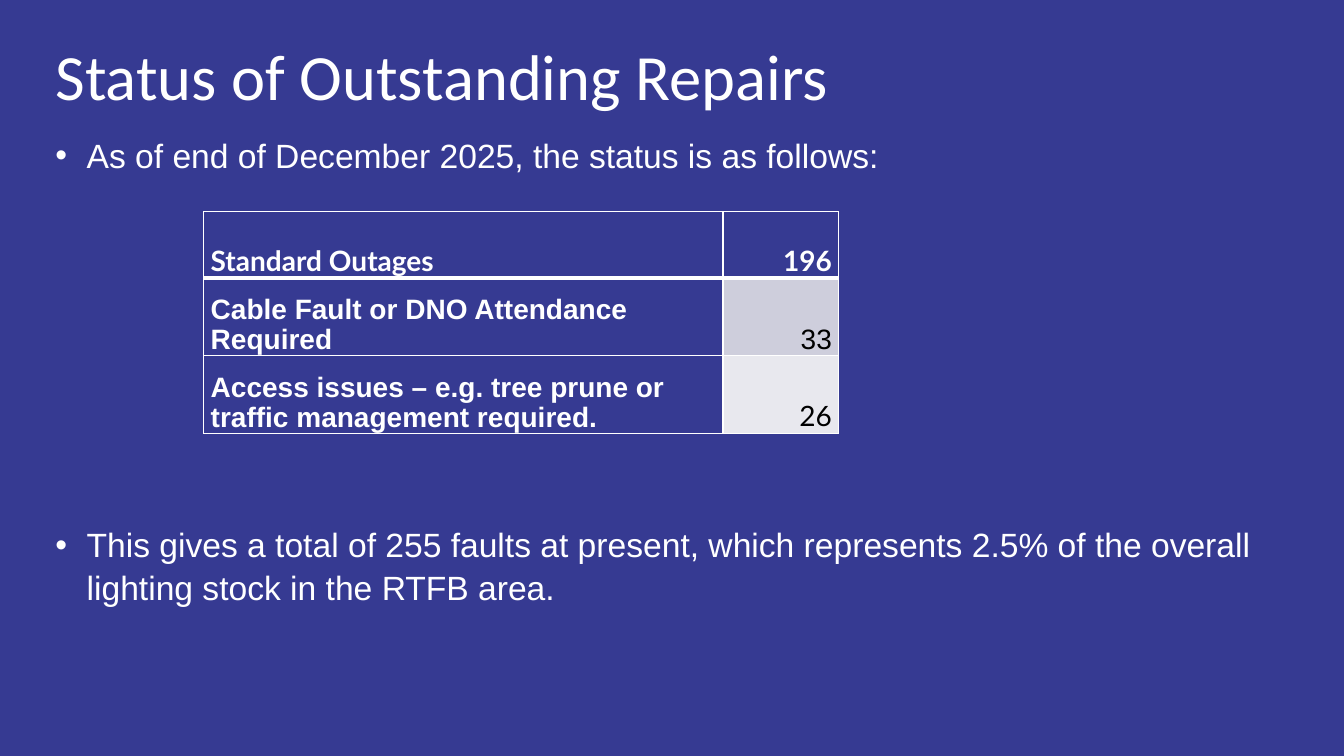
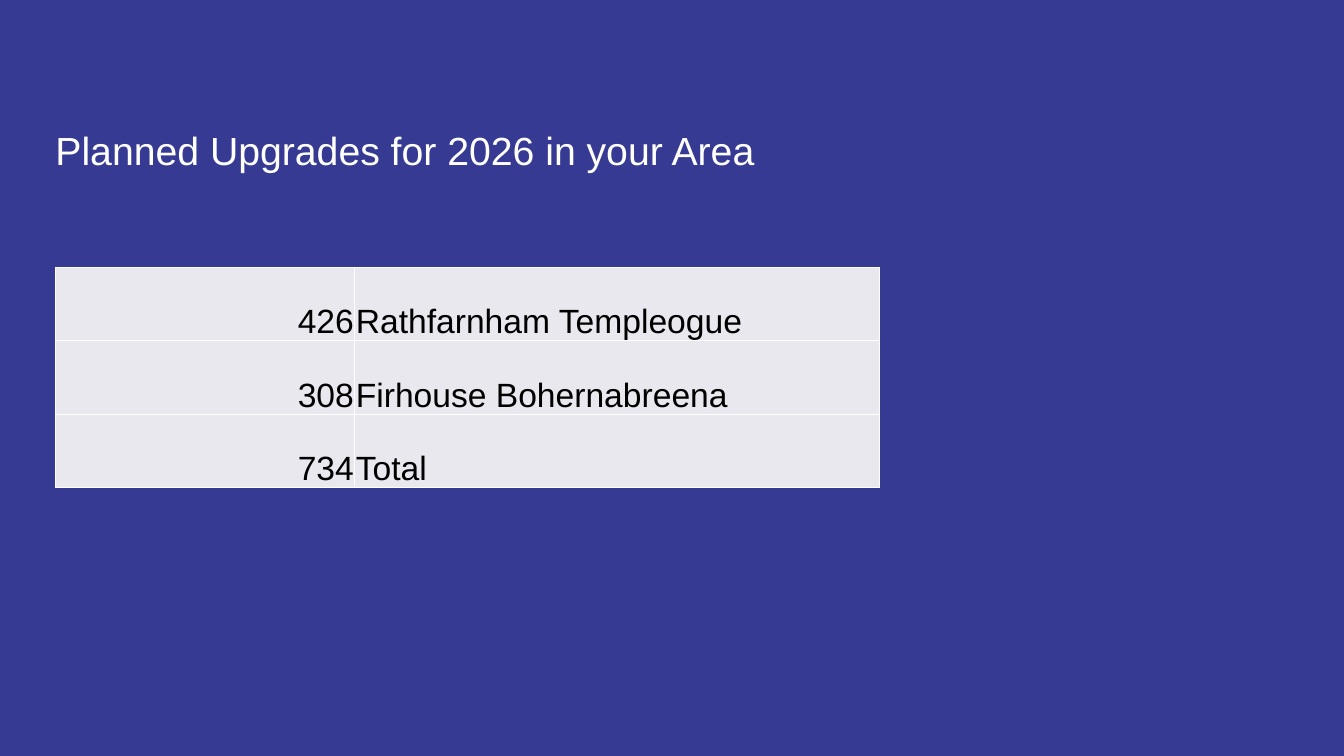
from lxml.etree import SubElement
from pptx import Presentation
from pptx.dml.color import RGBColor
from pptx.enum.text import MSO_ANCHOR as Anchor, MSO_AUTO_SIZE as AutoSize, PP_ALIGN as Align
from pptx.oxml.ns import qn
from pptx.util import Inches, Pt

NAVY = RGBColor(0x36, 0x3A, 0x92)
WHITE = RGBColor(0xFF, 0xFF, 0xFF)
BLACK = RGBColor(0, 0, 0)
BAND_DARK = RGBColor(0xCE, 0xCE, 0xDC)
BAND_LIGHT = RGBColor(0xE8, 0xE8, 0xEE)

LEFT = 0.55
TITLE_ONLY, TITLE_AND_BODY = 5, 1
THIN, THICK = 1, 3


class Deck:
    """Holds the shared style and the current slide."""

    def __init__(self):
        self.presentation = Presentation()
        self.presentation.slide_width = Inches(13.33)
        self.presentation.slide_height = Inches(7.5)
        fill = self.presentation.slide_master.background.fill
        fill.solid()
        fill.fore_color.rgb = NAVY
        self.slide = None

    def add_slide(self, layout):
        layouts = self.presentation.slide_layouts
        self.slide = self.presentation.slides.add_slide(layouts[layout])

    def add_text(self, paragraph, text, size, font, color=WHITE, bold=False):
        run = paragraph.add_run()
        run.text = text
        run.font.size = Pt(size)
        run.font.name = font
        run.font.color.rgb = color
        run.font.bold = bold

    def place(self, shape, top, width, height):
        """Position a placeholder and return its text frame."""
        shape.left, shape.top = Inches(LEFT), Inches(top)
        shape.width, shape.height = Inches(width), Inches(height)
        frame = shape.text_frame
        frame.margin_left = frame.margin_right = 0
        frame.margin_top = frame.margin_bottom = 0
        frame.word_wrap = True
        frame.auto_size = AutoSize.NONE
        frame.vertical_anchor = Anchor.TOP
        return frame

    def add_title(self, text, top, width, height, size, font):
        frame = self.place(self.slide.shapes.title, top, width, height)
        paragraph = frame.paragraphs[0]
        paragraph.alignment = Align.LEFT
        self.add_text(paragraph, text, size, font)

    def add_bullets(self, texts, top, width, height, gap):
        frame = self.place(self.slide.placeholders[1], top, width, height)
        for index, text in enumerate(texts):
            paragraph = frame.add_paragraph() if index else frame.paragraphs[0]
            properties = paragraph._p.get_or_add_pPr()
            properties.set("marL", str(Inches(0.31)))
            properties.set("indent", str(Inches(-0.31)))
            SubElement(properties, qn("a:buFont"), typeface="Arial")
            SubElement(properties, qn("a:buChar"), char="•")
            paragraph.line_spacing = 1.06
            paragraph.space_before = Pt(gap if index else 0)
            self.add_text(paragraph, text, 24, "Arial")

    def add_border(self, cell, side, width):
        line = SubElement(cell._tc.get_or_add_tcPr(), qn(f"a:ln{side}"), w=str(Pt(width)))
        solid = SubElement(line, qn("a:solidFill"))
        SubElement(solid, qn("a:srgbClr"), val=str(WHITE))

    def add_table(self, left, top, widths, heights, rows, margins, size, spacing=1.0, header=False):
        """Each cell is (text, alignment, font, text colour, bold, fill)."""
        frame = self.slide.shapes.add_table(
            len(rows), len(widths), Inches(left), Inches(top),
            Inches(sum(widths)), Inches(sum(heights)))
        table = frame.table
        table.first_row = header
        table.horz_banding = False
        for column, width in zip(table.columns, widths):
            column.width = Inches(width)
        for row, height in zip(table.rows, heights):
            row.height = Inches(height)
        side_margin, top_margin = margins
        for row_index, row in enumerate(rows):
            above = THICK if header and row_index == 1 else THIN
            below = THICK if header and row_index == 0 else THIN
            for column_index, (text, align, font, color, bold, fill) in enumerate(row):
                cell = table.cell(row_index, column_index)
                cell.margin_left = cell.margin_right = Inches(side_margin)
                cell.margin_top, cell.margin_bottom = Inches(top_margin), 0
                cell.vertical_anchor = Anchor.BOTTOM
                for side, width in zip("LRTB", (THIN, THIN, above, below)):
                    self.add_border(cell, side, width)
                cell.fill.solid()
                cell.fill.fore_color.rgb = fill
                paragraph = cell.text_frame.paragraphs[0]
                paragraph.alignment = align
                paragraph.line_spacing = spacing
                self.add_text(paragraph, text, size, font, color, bold)


def build_repairs(deck):
    deck.add_slide(TITLE_AND_BODY)
    deck.add_title("Status of Outstanding Repairs", 0.36, 12.1, 0.77, 46.1, "Calibri")
    deck.add_bullets([
        "As of end of December 2025, the status is as follows:",
        "This gives a total of 255 faults at present, which represents 2.5% of the overall "
        "lighting stock in the RTFB area.",
    ], 1.31, 11.86, 5.98, gap=248)

    # Fault counts: label, label font, count, count colour, bold count, count fill
    faults = [
        ("Standard Outages", "Lato", "196", WHITE, True, NAVY),
        ("Cable Fault or DNO Attendance Required", "Arial", "33", BLACK, False, BAND_DARK),
        ("Access issues – e.g. tree prune or traffic management required.", "Arial",
         "26", BLACK, False, BAND_LIGHT),
    ]
    rows = [[(label, Align.LEFT, font, WHITE, True, NAVY),
             (count, Align.RIGHT, "Arial" if count == "33" else "Lato", color, bold, fill)]
            for label, font, count, color, bold, fill in faults]
    deck.add_table(2.02, 2.1, [5.15, 1.15], [0.66, 0.77, 0.77], rows,
                   (0.07, 0), 20, spacing=0.96, header=True)


def build_upgrades(deck):
    deck.add_slide(TITLE_ONLY)
    deck.add_title("Planned Upgrades for 2026 in your Area", 1.25, 12.34, 0.89, 28, "Arial")

    # Upgrade counts by area
    upgrades = [("426", "Rathfarnham Templeogue"),
                ("308", "Firhouse Bohernabreena"),
                ("734", "Total")]
    style = ("Arial", BLACK, False, BAND_LIGHT)
    rows = [[(count, Align.RIGHT, *style), (area, Align.LEFT, *style)]
            for count, area in upgrades]
    deck.add_table(LEFT, 2.65, [2.97, 5.2], [0.73] * len(rows), rows, (0.01, 0.01), 24)


def main():
    deck = Deck()
    build_repairs(deck)
    build_upgrades(deck)
    deck.presentation.save("out.pptx")


if __name__ == "__main__":
    main()
